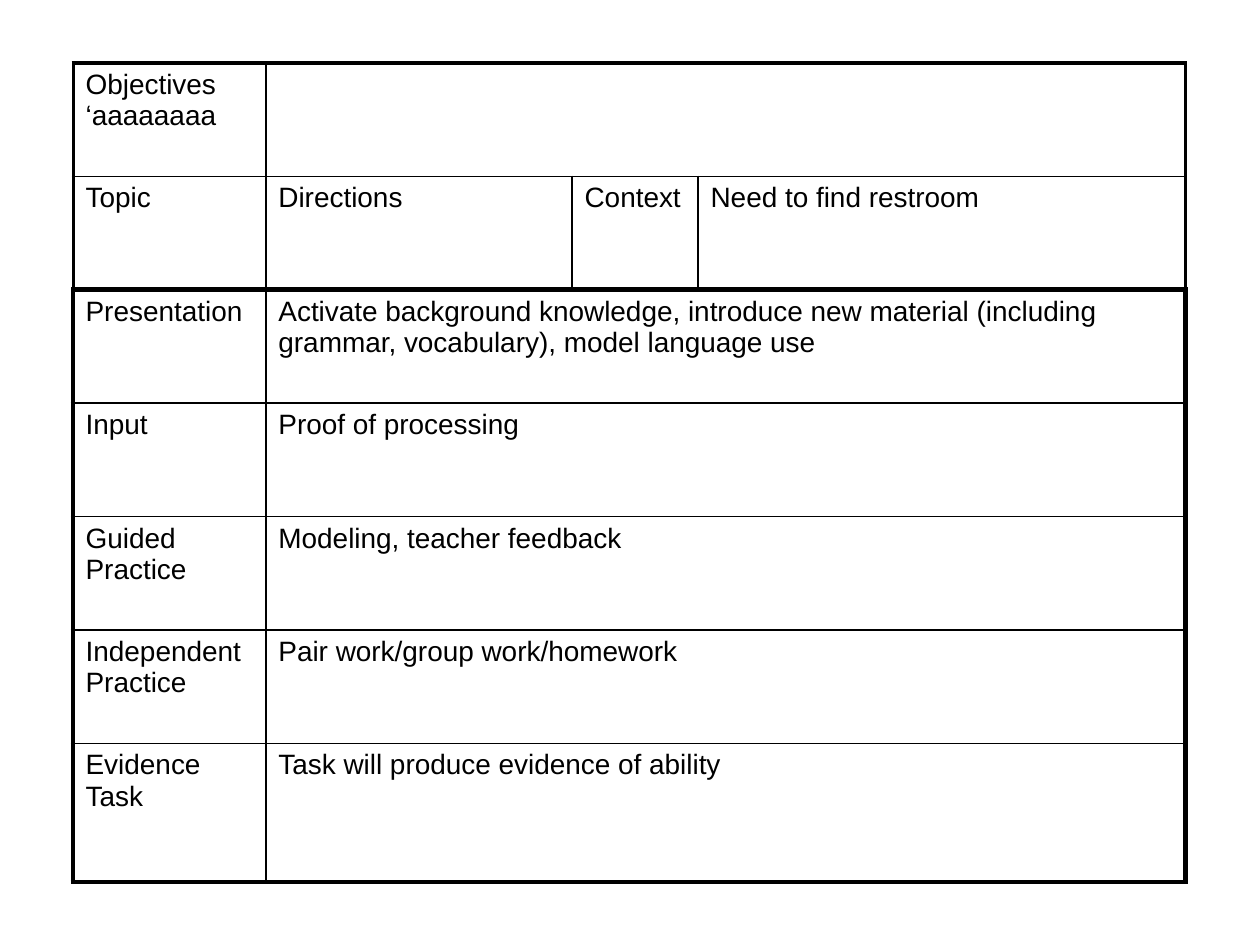
"""Build a lesson plan slide with one bordered table."""
from dataclasses import dataclass

from lxml import etree
from pptx import Presentation
from pptx.dml.color import RGBColor
from pptx.oxml import ns
from pptx.table import Table, _Cell
from pptx.util import Inches, Pt

BLACK = RGBColor(0, 0, 0)
FONT = "Arial"
COLUMNS = [1.53, 2.43, 1, 3.87]
ROW_HEIGHT, LAST_HEIGHT = 0.9, 1.1
HEADER_ROWS = 2
THIN, MEDIUM, THICK = 1, 2, 3


@dataclass
class PlanRow:
    label: str
    details: tuple[str, ...] = ("",)


ROWS = [
    PlanRow("Objectives\n‘aaaaaaaa"),
    PlanRow("Topic", ("Directions", "Context", "Need to find restroom")),
    PlanRow("Presentation", ("Activate background knowledge, introduce new material "
                             "(including grammar, vocabulary), model language use",)),
    PlanRow("Input", ("Proof of processing",)),
    PlanRow("Guided Practice", ("Modeling, teacher feedback",)),
    PlanRow("Independent Practice", ("Pair work/group work/homework",)),
    PlanRow("Evidence Task", ("Task will produce evidence of ability",)),
]


def set_border(cell: _Cell, side: str, width: float) -> None:
    tc_pr = cell._tc.get_or_add_tcPr()
    line = etree.SubElement(tc_pr, ns.qn(f"a:ln{side}"), w=str(Pt(width)))
    fill = etree.SubElement(line, ns.qn("a:solidFill"))
    etree.SubElement(fill, ns.qn("a:srgbClr"), val=str(BLACK))


def set_text(cell: _Cell, text: str) -> None:
    cell.text_frame.text = text
    for p in cell.text_frame.paragraphs:
        p.font.size = Pt(16)
        for r in p.runs:
            r.font.name = FONT
            r.font.size = Pt(16)
            r.font.color.rgb = BLACK


def style_cell(table: Table, row: int, col: int) -> None:
    cell = table.cell(row, col)
    outer = MEDIUM if row < HEADER_ROWS else THICK
    top = {0: MEDIUM, HEADER_ROWS: THICK}.get(row, THIN)
    bottom = THICK if row in (HEADER_ROWS - 1, len(ROWS) - 1) else THIN
    end = col + (cell.span_width if cell.is_merge_origin else 1)
    set_border(cell, "L", outer if col == 0 else THIN)
    set_border(cell, "R", outer if end == len(COLUMNS) else THIN)
    set_border(cell, "T", top)
    set_border(cell, "B", bottom)
    cell.fill.background()


def fill_row(table: Table, row: int, plan: PlanRow) -> None:
    if len(plan.details) == 1:
        table.cell(row, 1).merge(table.cell(row, len(COLUMNS) - 1))
    for col, text in enumerate((plan.label, *plan.details)):
        set_text(table.cell(row, col), text)
    for col in range(len(COLUMNS)):
        style_cell(table, row, col)


def main() -> None:
    prs = Presentation()
    prs.slide_width, prs.slide_height = Inches(10), Inches(7.5)
    s = prs.slides.add_slide(prs.slide_layouts[6])
    table = s.shapes.add_table(len(ROWS), len(COLUMNS), Inches(0.58), Inches(0.5),
                               Inches(sum(COLUMNS)), Inches(6.5)).table
    table.first_row = table.horz_banding = False
    for column, width in zip(table.columns, COLUMNS):
        column.width = Inches(width)
    for row, plan in enumerate(ROWS):
        table.rows[row].height = Inches(ROW_HEIGHT)
        fill_row(table, row, plan)
    table.rows[len(ROWS) - 1].height = Inches(LAST_HEIGHT)
    prs.save("out.pptx")


if __name__ == "__main__":
    main()
